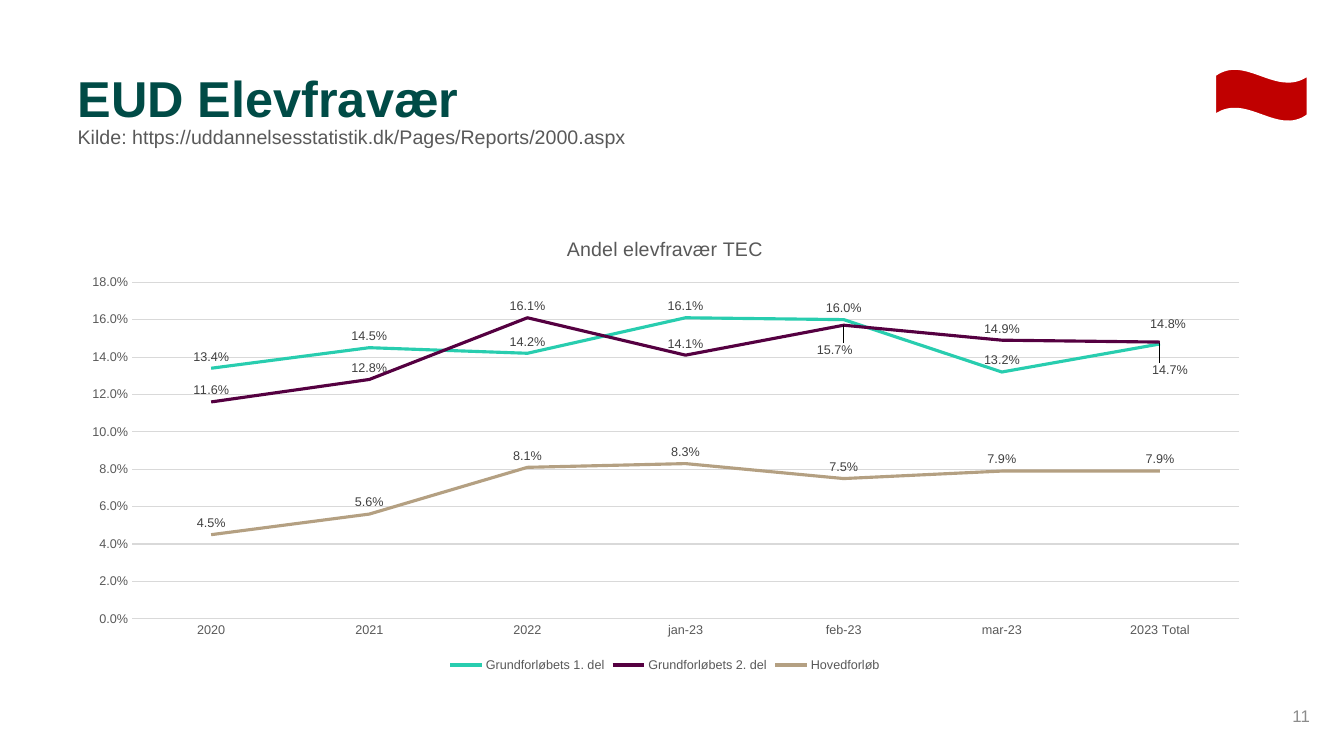
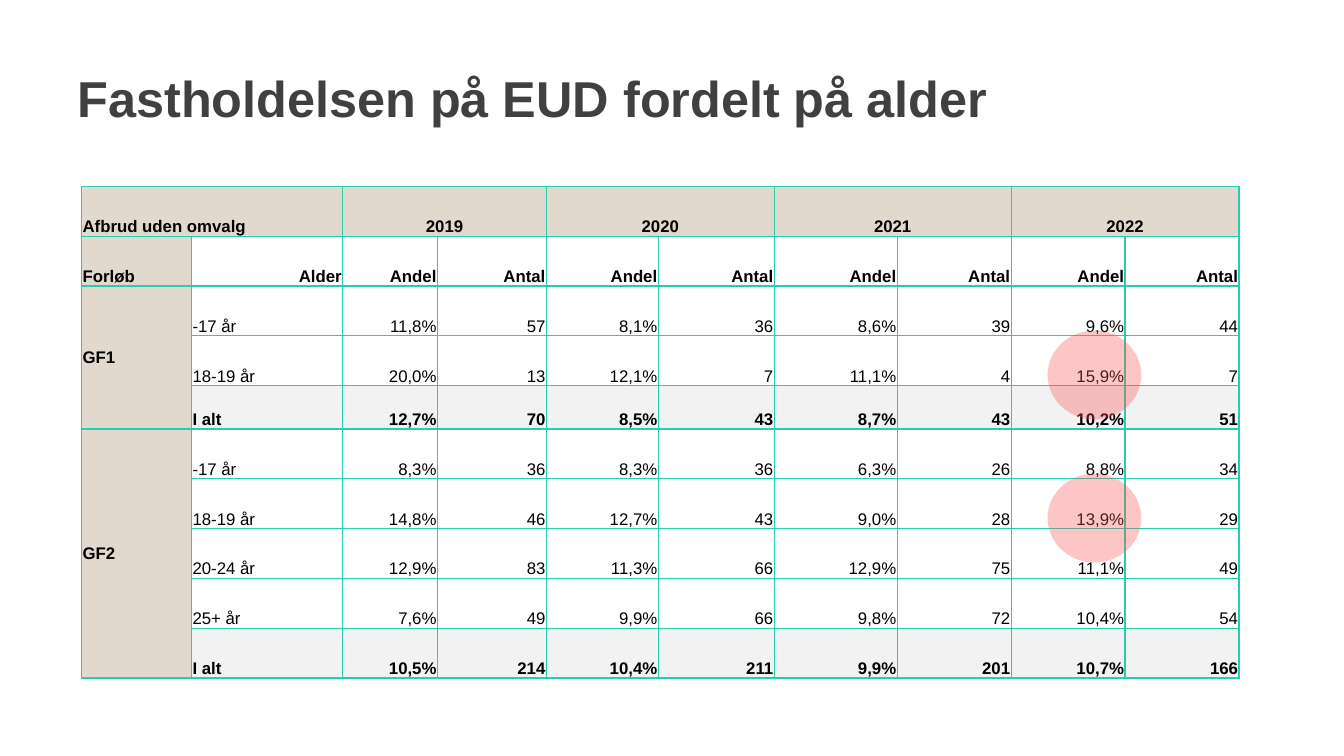
from pptx import Presentation
from pptx.chart.data import CategoryChartData
from pptx.dml.color import RGBColor
from pptx.enum.chart import XL_CHART_TYPE, XL_LABEL_POSITION, XL_LEGEND_POSITION, XL_TICK_MARK
from pptx.enum.shapes import MSO_SHAPE
from pptx.enum.text import MSO_ANCHOR, MSO_AUTO_SIZE, PP_ALIGN
from pptx.oxml import parse_xml
from pptx.oxml.ns import nsdecls, qn
from pptx.util import Inches, Pt

LINE = XL_CHART_TYPE.LINE
ABOVE = XL_LABEL_POSITION.ABOVE
BOTTOM = XL_LEGEND_POSITION.BOTTOM
NONE = XL_TICK_MARK.NONE
WAVE, OVAL = MSO_SHAPE.WAVE, MSO_SHAPE.OVAL
TOP, MIDDLE, LOW = MSO_ANCHOR.TOP, MSO_ANCHOR.MIDDLE, MSO_ANCHOR.BOTTOM
LEFT, CENTER, RIGHT = PP_ALIGN.LEFT, PP_ALIGN.CENTER, PP_ALIGN.RIGHT
FIXED = MSO_AUTO_SIZE.NONE

FONT = "Arial"
COLORS = {
    "green": "004B46", "dark": "404040", "text": "595959", "page": "8C8C8C",
    "grid": "D9D9D9", "teal": "28CDAF", "plum": "550041", "tan": "B4A082",
    "sand": "E1D9CD", "pale": "F2F2F2", "red": "C00000", "coral": "FA5050",
    "white": "FFFFFF", "black": "000000",
}
TITLE_BOX = (0.67, 0.68, 11.85, 1.17)
PLOT = (0.64, 0.63, 10.98, 3.34)

CATS = ["2020", "2021", "2022", "jan-23", "feb-23", "mar-23", "2023 Total"]
SERIES = [
    ("Grundforløbets 1. del", "teal", [0.134, 0.145, 0.142, 0.161, 0.16, 0.132, 0.147],
     {6: (0.1, 0.37)}),
    ("Grundforløbets 2. del", "plum", [0.116, 0.128, 0.161, 0.141, 0.157, 0.149, 0.148],
     {4: (-0.09, 0.36), 6: (0.08, -0.06)}),
    ("Hovedforløb", "tan", [0.045, 0.056, 0.081, 0.083, 0.075, 0.079, 0.079], {}),
]

COLS = [1.09, 1.5, 0.94, 1.08, 1.11, 1.15, 1.22, 1.13, 1.13, 1.13]
ROWS = [
    "Afbrud uden omvalg||2019||2020||2021||2022|",
    "Forløb|Alder|Andel|Antal|Andel|Antal|Andel|Antal|Andel|Antal",
    "GF1|-17 år|11,8%|57|8,1%|36|8,6%|39|9,6%|44",
    "|18-19 år|20,0%|13|12,1%|7|11,1%|4|15,9%|7",
    "|I alt|12,7%|70|8,5%|43|8,7%|43|10,2%|51",
    "GF2|-17 år|8,3%|36|8,3%|36|6,3%|26|8,8%|34",
    "|18-19 år|14,8%|46|12,7%|43|9,0%|28|13,9%|29",
    "|20-24 år|12,9%|83|11,3%|66|12,9%|75|11,1%|49",
    "|25+ år|7,6%|49|9,9%|66|9,8%|72|10,4%|54",
    "|I alt|10,5%|214|10,4%|211|9,9%|201|10,7%|166",
]
SPANS = [(0, c, 0, c + 1) for c in range(0, 10, 2)] + [(2, 0, 4, 0), (5, 0, 9, 0)]


def color(name):
    """Return the named colour."""
    return RGBColor.from_string(COLORS[name])


def style(font, size, tint, bold=False):
    """Set the face, size, colour and weight of a font."""
    font.name, font.size, font.bold = FONT, Pt(size), bold
    font.color.rgb = color(tint)


def place(box):
    """Turn a box in inches into lengths."""
    return [Inches(v) for v in box]


def add_title(slide, text, tint, source=None):
    """Place the title with an optional source line under it."""
    title = slide.shapes.title
    title.left, title.top, title.width, title.height = place(TITLE_BOX)
    frame = title.text_frame
    frame.auto_size, frame.vertical_anchor, frame.word_wrap = FIXED, TOP, True
    para = frame.paragraphs[0]
    para.alignment, para.line_spacing = LEFT, 0.9
    run = para.add_run()
    run.text = text
    style(run.font, 36, tint, True)
    if source:
        para.add_line_break()
        run = para.add_run()
        run.text = source
        style(run.font, 14, "text")


def add_page(slide, box, number):
    """Place the page number."""
    frame = slide.shapes.add_textbox(*place(box)).text_frame
    frame.word_wrap, frame.vertical_anchor = True, MIDDLE
    para = frame.paragraphs[0]
    para.text, para.alignment = number, RIGHT
    style(para.font, 12, "page")


def add_mark(slide, kind, box, fill, edge=None, alpha=None):
    """Place a filled shape with an optional edge and transparency."""
    mark = slide.shapes.add_shape(kind, *place(box))
    mark.shadow.inherit = False
    mark.fill.solid()
    mark.fill.fore_color.rgb = color(fill)
    if alpha:
        tone = mark.element.spPr.find(".//" + qn("a:srgbClr"))
        tone.append(parse_xml(f'<a:alpha {nsdecls("a")} val="{alpha * 1000}"/>'))
    if edge:
        mark.line.color.rgb = color(edge)
        mark.line.width = Pt(1.5)
    else:
        mark.line.fill.background()


def set_layout(node, index, size, spot, inner=False):
    """Give a chart part a manual layout, in inches of the chart's size."""
    for old in node.findall(qn("c:layout")):
        node.remove(old)
    parts = '<c:layoutTarget val="inner"/><c:xMode val="edge"/><c:yMode val="edge"/>' if inner else ""
    for tag, value, full in zip("xywh", spot, size * 2):
        parts += f'<c:{tag} val="{value / full:.4f}"/>'
    xml = f'<c:layout {nsdecls("c")}><c:manualLayout>{parts}</c:manualLayout></c:layout>'
    node.insert(index, parse_xml(xml))


def style_axes(chart):
    """Format both axes and the grid."""
    base, side = chart.category_axis, chart.value_axis
    for axis in (base, side):
        axis.major_tick_mark = axis.minor_tick_mark = NONE
        style(axis.tick_labels.font, 9, "text")
    side.minimum_scale, side.maximum_scale, side.major_unit = 0, 0.18, 0.02
    side.tick_labels.number_format = "0.0%"
    side.tick_labels.number_format_is_linked = False
    side.format.line.fill.background()
    side.has_major_gridlines = True
    for line in (base.format.line, side.major_gridlines.format.line):
        line.color.rgb = color("grid")
        line.width = Pt(0.75)


def style_series(series, tint, moves, size):
    """Format one line and its labels, shifting the labels in moves."""
    series.smooth = False
    series.format.line.color.rgb = color(tint)
    series.format.line.width = Pt(2.25)
    labels = series.data_labels
    labels.show_value, labels.position = True, ABOVE
    labels.number_format, labels.number_format_is_linked = "0.0%", False
    style(labels.font, 9, "dark")
    for index, move in moves.items():
        label = series.points[index].data_label
        label.position = ABOVE
        style(label.font, 9, "dark")
    for node in labels._element.findall(qn("c:dLbl")):
        index = int(node.find(qn("c:idx")).get("val"))
        set_layout(node, 1, size, moves[index])
        node.insert(2, parse_xml(f'<c:numFmt {nsdecls("c")} formatCode="0.0%" sourceLinked="0"/>'))


def add_lines(slide, box):
    """Place the line chart of absence."""
    data = CategoryChartData(number_format="0.0%")
    data.categories = CATS
    for name, _, values, _ in SERIES:
        data.add_series(name, values)
    chart = slide.shapes.add_chart(LINE, *place(box), data).chart
    style(chart.font, 10, "black")
    chart.has_title = True
    para = chart.chart_title.text_frame.paragraphs[0]
    para.text = "Andel elevfravær TEC"
    style(para.font, 14, "text")
    chart.has_legend = True
    chart.legend.position, chart.legend.include_in_layout = BOTTOM, False
    style(chart.legend.font, 9, "text")
    style_axes(chart)
    plot = chart.plots[0]
    plot.vary_by_categories = False
    for series, (_, tint, _, moves) in zip(plot.series, SERIES):
        style_series(series, tint, moves, box[2:])
    set_layout(chart._chartSpace.chart.plotArea, 0, box[2:], PLOT, True)


def add_edges(cell):
    """Draw the four borders of a cell."""
    props = cell._tc.get_or_add_tcPr()
    for index, side in enumerate("LRTB"):
        props.insert(index, parse_xml(
            f'<a:ln{side} {nsdecls("a")} w="12700"><a:solidFill>'
            f'<a:srgbClr val="{COLORS["teal"]}"/></a:solidFill></a:ln{side}>'))


def fill_cell(cell, text, row, col, total):
    """Write and format one cell by its place in the table."""
    cell.margin_left = cell.margin_right = cell.margin_top = Inches(0.01)
    cell.margin_bottom = 0
    cell.vertical_anchor = MIDDLE if col == 0 and row > 1 else LOW
    para = cell.text_frame.paragraphs[0]
    para.text = text
    if col == 0 or (col == 1 and row > 1):
        para.alignment = LEFT
    else:
        para.alignment = RIGHT if row else CENTER
    style(para.font, 12, "black", row < 2 or col == 0 or total)
    if row == 0 or col == 0 or total:
        cell.fill.solid()
        cell.fill.fore_color.rgb = color("sand" if row == 0 or col == 0 else "pale")
    else:
        cell.fill.background()
    add_edges(cell)


def add_grid(slide, box):
    """Place the table of dropouts by age."""
    table = slide.shapes.add_table(len(ROWS), len(COLS), *place(box)).table
    table.first_row = table.horz_banding = False
    for column, width in zip(table.columns, COLS):
        column.width = Inches(width)
    short = 0.43
    tall = (box[3] - short) / (len(ROWS) - 1)
    for row, line in enumerate(ROWS):
        table.rows[row].height = Inches(short if row == 4 else tall)
        texts = line.split("|")
        for col, text in enumerate(texts):
            fill_cell(table.cell(row, col), text, row, col, texts[1] == "I alt")
    for top, left, bottom, right in SPANS:
        table.cell(top, left).merge(table.cell(bottom, right))


def build_absence(slide):
    """Build the slide on student absence."""
    add_title(slide, "EUD Elevfravær", "green",
              "Kilde: https://uddannelsesstatistik.dk/Pages/Reports/2000.aspx")
    add_page(slide, (12.15, 7, 0.94, 0.21), "11")
    add_mark(slide, WAVE, (12.05, 0.68, 0.92, 0.53), "red", edge="white")
    add_lines(slide, (0.67, 2.17, 11.85, 4.54))


def build_ages(slide):
    """Build the slide on retention by age."""
    add_title(slide, "Fastholdelsen på EUD fordelt på alder", "dark")
    add_grid(slide, (0.81, 1.85, 11.48, 4.88))
    for top in (3.28, 4.7):
        add_mark(slide, OVAL, (10.39, top, 0.93, 0.88), "coral", alpha=33)


def main():
    """Build and save the presentation."""
    deck = Presentation()
    deck.slide_width, deck.slide_height = Inches(13.33), Inches(7.5)
    for build in (build_absence, build_ages):
        build(deck.slides.add_slide(deck.slide_layouts[5]))
    deck.save("out.pptx")


if __name__ == "__main__":
    main()
